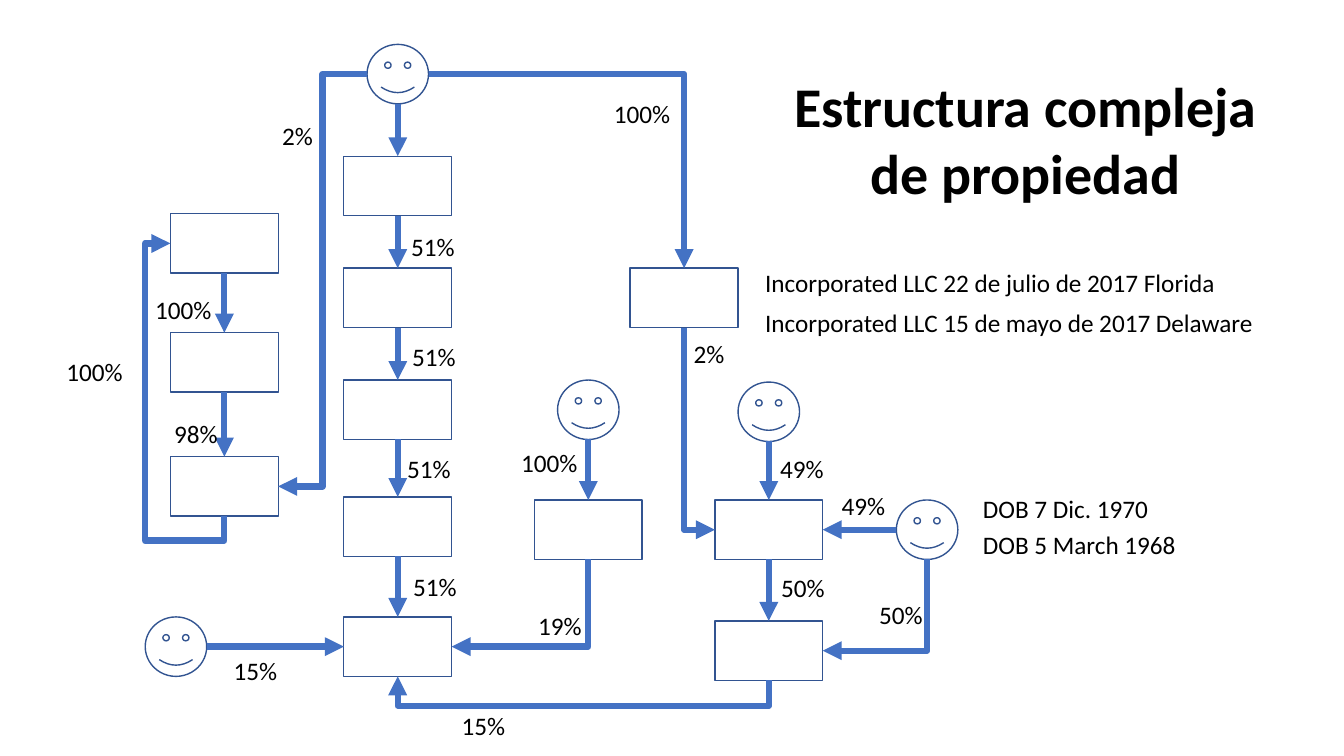
from lxml.etree import SubElement
from pptx import Presentation
from pptx.dml.color import RGBColor
from pptx.enum.shapes import MSO_CONNECTOR, MSO_SHAPE
from pptx.enum.text import MSO_ANCHOR, MSO_AUTO_SIZE, PP_ALIGN
from pptx.oxml.ns import qn
from pptx.util import Pt

EMU_PER_PX = 9144
SLIDE_SIZE = (1333, 750)
BOX_SIZE = (107, 59)
FACE_SIZE = (61, 59)
BLACK = RGBColor(0x00, 0x00, 0x00)
OUTLINE = RGBColor(0x32, 0x54, 0x91)
ARROW = RGBColor(0x44, 0x72, 0xC4)
TOP, LEFT, BOTTOM, RIGHT = range(4)

TITLE = ("Estructura compleja de propiedad", 765, 66, 504, 145)
BOXES = {
    "chain 1": (341, 155), "chain 2": (341, 266), "chain 3": (341, 377),
    "chain 4": (341, 493), "target": (341, 612),
    "loop 1": (169, 212), "loop 2": (169, 330), "loop 3": (169, 453),
    "sole": (530, 496), "florida": (625, 266),
    "joint": (709, 496), "holding": (709, 616),
}
FACES = {
    "founder": (364, 44), "sole owner": (553, 377), "joint owner": (732, 379),
    "partner": (889, 496), "minor owner": (144, 612),
}
LINKS = [
    ("founder", BOTTOM, "chain 1", TOP, ()),
    ("chain 1", BOTTOM, "chain 2", TOP, ()),
    ("chain 2", BOTTOM, "chain 3", TOP, ()),
    ("chain 3", BOTTOM, "chain 4", TOP, ()),
    ("chain 4", BOTTOM, "target", TOP, ()),
    ("loop 1", BOTTOM, "loop 2", TOP, ()),
    ("loop 2", BOTTOM, "loop 3", TOP, ()),
    ("loop 3", BOTTOM, "loop 1", LEFT, (-0.09, 1.47)),
    ("founder", LEFT, "loop 3", RIGHT, ()),
    ("founder", RIGHT, "florida", TOP, ()),
    ("florida", BOTTOM, "joint", LEFT, ()),
    ("sole owner", BOTTOM, "sole", TOP, ()),
    ("sole", BOTTOM, "target", RIGHT, ()),
    ("minor owner", RIGHT, "target", LEFT, ()),
    ("joint owner", BOTTOM, "joint", TOP, ()),
    ("partner", LEFT, "joint", RIGHT, ()),
    ("joint", BOTTOM, "holding", TOP, ()),
    ("partner", BOTTOM, "holding", RIGHT, ()),
    ("holding", BOTTOM, "target", BOTTOM, (-6.25,)),
]
LABELS = [
    ("Incorporated LLC 22 de julio de 2017 Florida", 749, 260, 472),
    ("Incorporated LLC 15 de mayo de 2017 Delaware", 749, 300, 510),
    ("DOB 7 Dic. 1970", 965, 484, 192),
    ("DOB 5 March 1968", 965, 520, 225),
    ("51%", 398, 225, 64), ("51%", 399, 334, 64), ("51%", 394, 445, 64),
    ("51%", 400, 562, 64), ("15%", 448, 700, 64), ("15%", 222, 645, 64),
    ("19%", 524, 601, 64), ("100%", 56, 349, 77), ("100%", 599, 93, 77),
    ("100%", 144, 287, 77), ("2%", 270, 114, 51), ("49%", 764, 445, 64),
    ("49%", 825, 482, 64), ("98%", 163, 410, 64), ("2%", 678, 331, 51),
    ("100%", 507, 439, 77), ("50%", 765, 563, 64), ("50%", 862, 590, 64),
]
LABEL_HEIGHT = 40
LABEL_FONT = {"name": "Calibri", "size": Pt(18), "bold": False}
TITLE_FONT = {"name": "Calibri", "size": Pt(40), "bold": True}


def emu(*lengths):
    """Turn px lengths into EMU."""
    return [round(length * EMU_PER_PX) for length in lengths]


def set_values(target, values):
    """Set attributes from a dict of format values."""
    for name, value in values.items():
        setattr(target, name, value)


def write(shape, text, font, frame_format):
    """Put one formatted paragraph in a shape."""
    set_values(shape.text_frame, frame_format)
    para = shape.text_frame.paragraphs[0]
    span = para.add_run()
    span.text = text
    set_values(span.font, font)
    span.font.color.rgb = BLACK
    return para


def add_node(page, kind, place, size):
    """Draw an unfilled box or face."""
    node = page.shapes.add_shape(kind, *emu(*place, *size))
    node.shadow.inherit = False
    node.fill.background()
    node.line.color.rgb = OUTLINE
    node.line.width = Pt(1)
    return node


def side_point(name, side):
    """Find the middle of one side of a box or face."""
    left, top = BOXES.get(name) or FACES[name]
    width, height = BOX_SIZE if name in BOXES else FACE_SIZE
    across, down = [(0.5, 0), (0, 0.5), (0.5, 1), (1, 0.5)][side]
    return left + across * width, top + down * height


def add_elbow(page, begin, end, start_side, end_side, bends):
    """Draw a bent connector that leaves along its starting side."""
    upright = start_side in (TOP, BOTTOM)
    if upright:
        center_x, center_y = (begin[0] + end[0]) / 2, (begin[1] + end[1]) / 2
        half_x, half_y = (end[0] - begin[0]) / 2, (end[1] - begin[1]) / 2
        begin = (center_x - half_y, center_y + half_x)
        end = (center_x + half_y, center_y - half_x)
    link = page.shapes.add_connector(MSO_CONNECTOR.ELBOW, *emu(*begin, *end))
    properties = link._element.spPr
    if upright:
        properties.find(qn("a:xfrm")).set("rot", "5400000")
    geometry = properties.find(qn("a:prstGeom"))
    parallel = start_side % 2 == end_side % 2
    geometry.set("prst", f"bentConnector{2 + max(len(bends), int(parallel))}")
    guides = geometry.find(qn("a:avLst"))
    for number, bend in enumerate(bends, 1):
        SubElement(guides, qn("a:gd"), name=f"adj{number}",
                   fmla=f"val {round(bend * 100000)}")
    return link


def add_link(page, nodes, start, start_side, finish, end_side, bends):
    """Draw an ownership arrow between two nodes."""
    begin, end = side_point(start, start_side), side_point(finish, end_side)
    if begin[0] == end[0] or begin[1] == end[1]:
        link = page.shapes.add_connector(MSO_CONNECTOR.STRAIGHT, *emu(*begin, *end))
        if start in BOXES:
            link.begin_connect(nodes[start], start_side)
        link.end_connect(nodes[finish], end_side)
    else:
        link = add_elbow(page, begin, end, start_side, end_side, bends)
    link.line.color.rgb = ARROW
    link.line.width = Pt(4.5)
    SubElement(link.line._get_or_add_ln(), qn("a:tailEnd"), type="triangle")
    SubElement(link._element.spPr, qn("a:effectLst"))


def main():
    """Build the ownership slide."""
    deck = Presentation()
    deck.slide_width, deck.slide_height = emu(*SLIDE_SIZE)
    page = deck.slides.add_slide(deck.slide_layouts[5])
    nodes = {}
    for kind, places, size in ((MSO_SHAPE.RECTANGLE, BOXES, BOX_SIZE),
                               (MSO_SHAPE.SMILEY_FACE, FACES, FACE_SIZE)):
        for name, place in places.items():
            nodes[name] = add_node(page, kind, place, size)
    for link in LINKS:
        add_link(page, nodes, *link)
    for text, left, top, width in LABELS:
        box = page.shapes.add_textbox(*emu(left, top, width, LABEL_HEIGHT))
        write(box, text, LABEL_FONT, {"word_wrap": False})
    text, *place = TITLE
    title = page.shapes.title
    set_values(title, dict(zip(("left", "top", "width", "height"), emu(*place))))
    para = write(title, text, TITLE_FONT, {
        "word_wrap": True, "vertical_anchor": MSO_ANCHOR.TOP,
        "auto_size": MSO_AUTO_SIZE.NONE})
    para.alignment = PP_ALIGN.CENTER
    deck.save("out.pptx")


if __name__ == "__main__":
    main()
